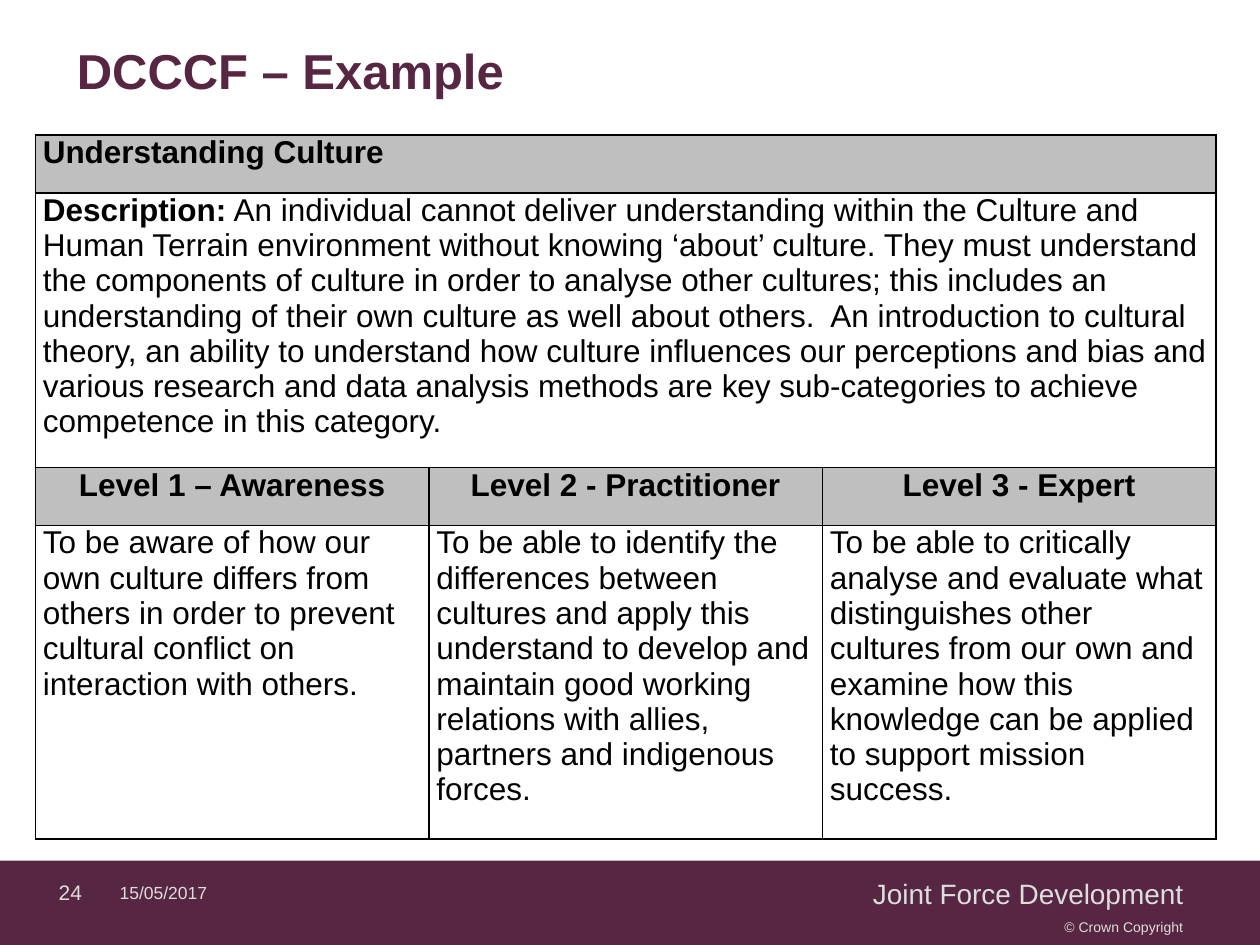
"""Build the DCCCF example slide with its competence table."""
import lxml.etree
import pptx
import pptx.dml.color
import pptx.enum.shapes
import pptx.enum.text
import pptx.oxml
import pptx.util

Inches = pptx.util.Inches
ALIGN = pptx.enum.text.PP_ALIGN
MIDDLE = pptx.enum.text.MSO_ANCHOR.MIDDLE
NS = "http://schemas.openxmlformats.org/drawingml/2006/main"


def rgb(value):
    return pptx.dml.color.RGBColor.from_string(value)


def style(p, size, color, align=ALIGN.LEFT, bold=False):
    p.alignment = align
    p.font.name = "Arial"
    p.font.size = pptx.util.Pt(size)
    p.font.bold = bold
    p.font.color.rgb = rgb(color)


prs = pptx.Presentation()
prs.slide_width, prs.slide_height = Inches(10), Inches(7.5)
s = prs.slides.add_slide(prs.slide_layouts[5])

band = s.shapes.add_shape(
    pptx.enum.shapes.MSO_SHAPE.RECTANGLE, 0, Inches(6.83), Inches(10), Inches(0.67))
band.shadow.inherit = False
band.fill.solid()
band.fill.fore_color.rgb = rgb("572642")
band.line.fill.background()

footers = [
    ("© Crown Copyright", 3.54, 7.21, 5.95, 8, ALIGN.RIGHT),
    ("Joint Force Development", 3.54, 6.94, 5.95, 16, ALIGN.RIGHT),
    ("15/05/2017", 0.75, 6.93, 0.99, 10, ALIGN.RIGHT),
    ("24", 0.25, 6.93, 0.5, 12, ALIGN.RIGHT),
]
for text, left, top, width, size, align in footers:
    sp = s.shapes.add_textbox(Inches(left), Inches(top), Inches(width), Inches(0.3))
    tf = sp.text_frame
    tf.word_wrap = True
    tf.vertical_anchor = MIDDLE
    tf.margin_top = tf.margin_bottom = 0
    tf.text = text
    style(tf.paragraphs[0], size, "DDDDDD", align)

title = s.shapes.title
title.left, title.top, title.width, title.height = (
    Inches(v) for v in (0.51, 0.13, 9, 0.85))
tf = title.text_frame
tf.text = "DCCCF – Example"
tf.vertical_anchor = MIDDLE
style(tf.paragraphs[0], 28, "572642", bold=True)

rows = [
    ["Understanding Culture"],
    ["Description:"],
    ["Level 1 – Awareness", "Level 2 - Practitioner", "Level 3 - Expert"],
    ["To be aware of how our own culture differs from others in order to prevent "
     "cultural conflict on interaction with others.",
     "To be able to identify the differences between cultures and apply this "
     "understand to develop and maintain good working relations with allies, "
     "partners and indigenous forces.",
     "To be able to critically analyse and evaluate what distinguishes other "
     "cultures from our own and examine how this knowledge can be applied to "
     "support mission success."],
]
description = (
    " An individual cannot deliver understanding within the Culture and Human "
    "Terrain environment without knowing ‘about’ culture. They must understand the "
    "components of culture in order to analyse other cultures; this includes an "
    "understanding of their own culture as well about others.  An introduction to "
    "cultural theory, an ability to understand how culture influences our "
    "perceptions and bias and various research and data analysis methods are key "
    "sub-categories to achieve competence in this category.")

table = s.shapes.add_table(
    4, 3, Inches(0.28), Inches(1.07), Inches(9.37), Inches(5.59)).table
table.first_row = table.horz_banding = False
for column in table.columns:
    column.width = Inches(9.37 / 3)
for row, height in zip(table.rows, (0.46, 2.18, 0.46, 2.49)):
    row.height = Inches(height)

for i, texts in enumerate(rows):
    header = i in (0, 2)
    for j in range(3):
        cell = table.cell(i, j)
        cell.margin_left = cell.margin_right = Inches(0.06)
        cell.margin_top = cell.margin_bottom = 0
        tcPr = cell._tc.get_or_add_tcPr()
        for side in ("lnL", "lnR", "lnT", "lnB"):
            tcPr.append(pptx.oxml.parse_xml(
                f'<a:{side} xmlns:a="{NS}" w="12700"><a:solidFill>'
                f'<a:srgbClr val="000000"/></a:solidFill></a:{side}>'))
        if header:
            cell.fill.solid()
            cell.fill.fore_color.rgb = rgb("BFBFBF")
        else:
            cell.fill.background()
        if j < len(texts):
            cell.text = texts[j]
            style(cell.text_frame.paragraphs[0], 18, "000000",
                  ALIGN.CENTER if i == 2 else ALIGN.LEFT, header)
    if len(texts) == 1:
        table.cell(i, 0).merge(table.cell(i, 2))

p = table.cell(1, 0).text_frame.paragraphs[0]
p.runs[0].font.bold = True
r = p.add_run()
r.text = description

prs.save("out.pptx")
